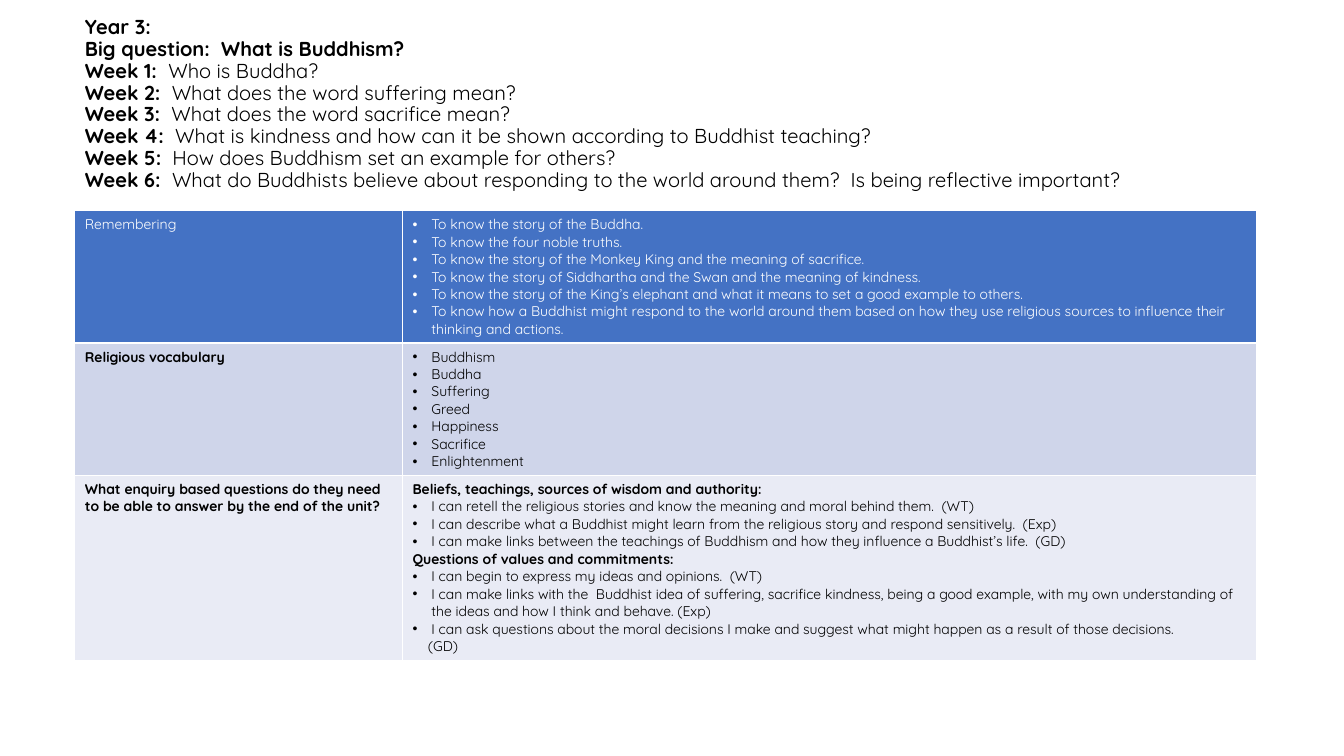
import pptx
import pptx.dml.color
import pptx.enum.text
import pptx.util
from lxml import etree

Pt = pptx.util.Pt
FONT = "Quicksand"
COLOURS = {
    "black": "000000",
    "white": "FFFFFF",
    "header": "4472C4",
    "vocabulary": "CFD5EA",
    "enquiry": "E9EBF5",
}
HEADING, BULLET, PLAIN, CONTINUED = "heading", "bullet", "plain", "continued"

TITLE_LINES = [
    ("Year 3:", ""),
    ("Big question:  What is Buddhism?", ""),
    ("Week 1:  ", "Who is Buddha?"),
    ("Week 2:  ", "What does the word suffering mean?"),
    ("Week 3:  ", "What does the word sacrifice mean?"),
    ("Week 4:  ", "What is kindness and how can it be shown according to Buddhist teaching?"),
    ("Week 5:", "  How does Buddhism set an example for others?"),
    ("Week 6:  ", "What do Buddhists believe about responding to the world around them?"
                  "  Is being reflective important?"),
]


def bullets(*texts):
    return [(BULLET, text) for text in texts]


# Each row: fill, text colour, height, left cell lines, right cell lines
UNIT_ROWS = [
    ("header", "white", 94, [(PLAIN, "Remembering")], bullets(
        "To know the story of the Buddha.",
        "To know the four noble truths.",
        "To know the story of the Monkey King and the meaning of sacrifice.",
        "To know the story of Siddhartha and the Swan and the meaning of kindness.",
        "To know the story of the King’s elephant and what it means to set a good example to others.",
        "To know how a Buddhist might respond to the world around them based on how they use "
        "religious sources to influence their thinking and actions.",
    )),
    ("vocabulary", "black", 94, [(HEADING, "Religious vocabulary")], bullets(
        "Buddhism", "Buddha", "Suffering", "Greed", "Happiness", "Sacrifice", "Enlightenment",
    )),
    ("enquiry", "black", 132,
     [(HEADING, "What enquiry based questions do they need to be able to answer by the end of the unit?")],
     [(HEADING, "Beliefs, teachings, sources of wisdom and authority:")]
     + bullets(
         "I can retell the religious stories and know the meaning and moral behind them.  (WT)",
         "I can describe what a Buddhist might learn from the religious story and respond sensitively.  (Exp)",
         "I can make links between the teachings of Buddhism and how they influence a Buddhist’s life.  (GD)",
     )
     + [(HEADING, "Questions of values and commitments:")]
     + bullets(
         "I can begin to express my ideas and opinions.  (WT)",
         "I can make links with the  Buddhist idea of suffering, sacrifice kindness, being a good example, "
         "with my own understanding of the ideas and how I think and behave. (Exp)",
         "I can ask questions about the moral decisions I make and suggest what might happen as a result "
         "of those decisions.",
     )
     + [(CONTINUED, "(GD)")]),
]


def rgb(name):
    return pptx.dml.color.RGBColor.from_string(COLOURS[name])


def format_run(run, size, colour, bold):
    run.font.name = FONT
    run.font.size = Pt(size)
    run.font.bold = bold
    run.font.color.rgb = rgb(colour)


def indent(paragraph, left, first_line=0):
    properties = paragraph._p.get_or_add_pPr()
    properties.set("marL", str(Pt(left)))
    properties.set("indent", str(Pt(first_line)))
    return properties


def add_bullet(paragraph):
    properties = indent(paragraph, 13.5, -13.5)
    font = etree.SubElement(properties, pptx.oxml.ns.qn("a:buFont"))
    font.set("typeface", "Arial")
    mark = etree.SubElement(properties, pptx.oxml.ns.qn("a:buChar"))
    mark.set("char", "•")


def fill_title(title):
    title.left, title.top, title.width, title.height = Pt(53.5), Pt(36), Pt(801.5), Pt(93)
    frame = title.text_frame
    frame.word_wrap = True
    frame.auto_size = pptx.enum.text.MSO_AUTO_SIZE.NONE
    frame.vertical_anchor = pptx.enum.text.MSO_ANCHOR.MIDDLE
    frame.margin_bottom = Pt(19.2)
    frame.text = "\n".join(label for label, _ in TITLE_LINES)
    for paragraph, (_, question) in zip(frame.paragraphs, TITLE_LINES):
        paragraph.alignment = pptx.enum.text.PP_ALIGN.LEFT
        paragraph.line_spacing = 0.9
        paragraph.space_before = Pt(0)
        format_run(paragraph.runs[0], 14.4, "black", True)
        if question:
            question_run = paragraph.add_run()
            question_run.text = question
            format_run(question_run, 14.4, "black", False)


def fill_cell(cell, lines, fill, colour):
    cell.fill.solid()
    cell.fill.fore_color.rgb = rgb(fill)
    cell.text_frame.text = "\n".join(text for _, text in lines)
    for paragraph, (kind, _) in zip(cell.text_frame.paragraphs, lines):
        format_run(paragraph.runs[0], 10, colour, kind == HEADING)
        if kind == BULLET:
            add_bullet(paragraph)
        elif kind == CONTINUED:
            indent(paragraph, 11)


def add_unit_table(slide):
    column_widths = (234, 610)
    total_height = sum(row[2] for row in UNIT_ROWS)
    table = slide.shapes.add_table(
        len(UNIT_ROWS), len(column_widths),
        Pt(53.5), Pt(150.5), Pt(sum(column_widths)), Pt(total_height),
    ).table
    for column, width in zip(table.columns, column_widths):
        column.width = Pt(width)
    for row, (fill, colour, height, topic, details) in zip(table.rows, UNIT_ROWS):
        row.height = Pt(height)
        for cell, lines in zip(row.cells, (topic, details)):
            fill_cell(cell, lines, fill, colour)


def main():
    presentation = pptx.Presentation()
    presentation.slide_width, presentation.slide_height = Pt(960), Pt(540)
    title_only = presentation.slide_layouts[5]
    slide = presentation.slides.add_slide(title_only)
    fill_title(slide.shapes.title)
    add_unit_table(slide)
    presentation.save("out.pptx")


if __name__ == "__main__":
    main()
